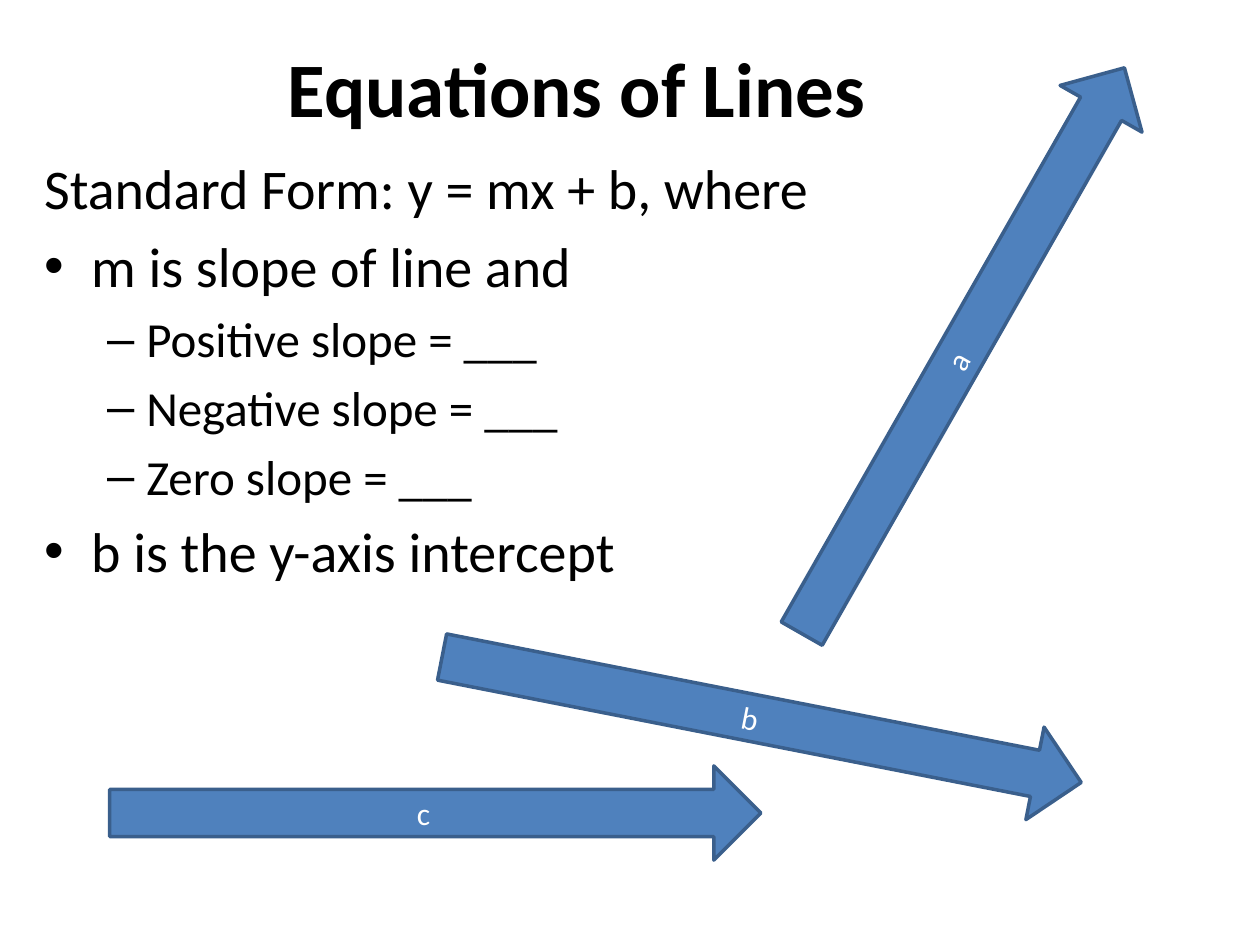
"""Build the slide on equations of lines, with three arrows to compare."""
from dataclasses import dataclass

import pptx
import pptx.dml.color
import pptx.enum.shapes
import pptx.enum.text
import pptx.oxml.ns
import pptx.util
from lxml import etree

Cm = pptx.util.Cm
Pt = pptx.util.Pt
Align = pptx.enum.text.PP_ALIGN
Anchor = pptx.enum.text.MSO_ANCHOR


@dataclass(frozen=True)
class Theme:
    """Font, colours and type sizes of the slide."""
    font: str = "Calibri"
    ink: str = "000000"
    arrow_text: str = "FFFFFF"
    arrow_fill: str = "4F81BD"
    arrow_line: str = "3A5F8C"
    title_size: int = 44
    body_size: int = 32
    detail_size: int = 28
    label_size: int = 18


THEME = Theme()
ARROW_WIDTH, ARROW_HEIGHT = 13.13, 1.9

BULLETS = {
    "plain": None,
    "point": ("•", 0.95, 0.95),
    "detail": ("–", 2.06, 0.79),
}

BODY = [
    ("Standard Form: y = mx + b, where", "plain"),
    ("m is slope of line and", "point"),
    ("Positive slope = ___", "detail"),
    ("Negative slope = ___", "detail"),
    ("Zero slope = ___", "detail"),
    ("b is the y-axis intercept", "point"),
]

ARROWS = [
    ("c", 2.21, 15.44, 0),
    ("a", 12.85, 6.12, 299.7),
    ("b", 8.79, 13.56, 11.1),
]


def color(value):
    """Return the colour object for a hex value."""
    return pptx.dml.color.RGBColor.from_string(value)


def write_text(paragraph, text, *, size, ink=THEME.ink, bold=False,
               align=Align.LEFT, space_before=0):
    """Write formatted text into a paragraph."""
    paragraph.alignment = align
    paragraph.space_before = Pt(space_before)
    run = paragraph.add_run()
    run.text = text
    run.font.name = THEME.font
    run.font.size = Pt(size)
    run.font.bold = bold
    run.font.color.rgb = color(ink)


def set_bullet(paragraph, character, margin, hanging):
    """Give a paragraph a bullet with a hanging indent."""
    properties = paragraph._p.get_or_add_pPr()
    properties.set("marL", str(Cm(margin)))
    properties.set("indent", str(-Cm(hanging)))
    for tag, attribute, value in (("a:buFont", "typeface", "Arial"),
                                  ("a:buChar", "char", character)):
        element = etree.SubElement(properties, pptx.oxml.ns.qn(tag))
        element.set(attribute, value)


def add_text_frame(slide, left, top, width, height, anchor):
    """Add a wrapping text box and return its text frame."""
    box = slide.shapes.add_textbox(Cm(left), Cm(top), Cm(width), Cm(height))
    frame = box.text_frame
    frame.word_wrap = True
    frame.vertical_anchor = anchor
    return frame


def add_title(slide, text):
    """Add the centred title."""
    frame = add_text_frame(slide, 0.2, 0.64, 22.86, 2.21, Anchor.MIDDLE)
    write_text(frame.paragraphs[0], text, size=THEME.title_size, bold=True,
               align=Align.CENTER)


def add_body(slide, lines):
    """Add the body lines with their bullets."""
    frame = add_text_frame(slide, 0.64, 2.97, 22.86, 12.57, Anchor.TOP)
    for index, (text, kind) in enumerate(lines):
        paragraph = frame.add_paragraph() if index else frame.paragraphs[0]
        size = THEME.detail_size if kind == "detail" else THEME.body_size
        write_text(paragraph, text, size=size, space_before=size * 0.2)
        if kind == "detail":
            paragraph.level = 1
        if BULLETS[kind]:
            set_bullet(paragraph, *BULLETS[kind])


def add_arrow(slide, label, left, top, rotation):
    """Add a labelled block arrow turned by a number of degrees."""
    arrow = slide.shapes.add_shape(
        pptx.enum.shapes.MSO_SHAPE.RIGHT_ARROW,
        Cm(left), Cm(top), Cm(ARROW_WIDTH), Cm(ARROW_HEIGHT))
    arrow.rotation = rotation
    arrow.shadow.inherit = False
    arrow.fill.solid()
    arrow.fill.fore_color.rgb = color(THEME.arrow_fill)
    arrow.line.color.rgb = color(THEME.arrow_line)
    arrow.line.width = Pt(2)
    arrow.text_frame.vertical_anchor = Anchor.MIDDLE
    write_text(arrow.text_frame.paragraphs[0], label, size=THEME.label_size,
               ink=THEME.arrow_text, align=Align.CENTER)


def main():
    """Build and save the presentation."""
    presentation = pptx.Presentation()
    presentation.slide_width = Cm(25.4)
    presentation.slide_height = Cm(19.05)
    slide = presentation.slides.add_slide(presentation.slide_layouts[6])
    add_title(slide, "Equations of Lines")
    add_body(slide, BODY)
    for arrow in ARROWS:
        add_arrow(slide, *arrow)
    presentation.save("out.pptx")


if __name__ == "__main__":
    main()
